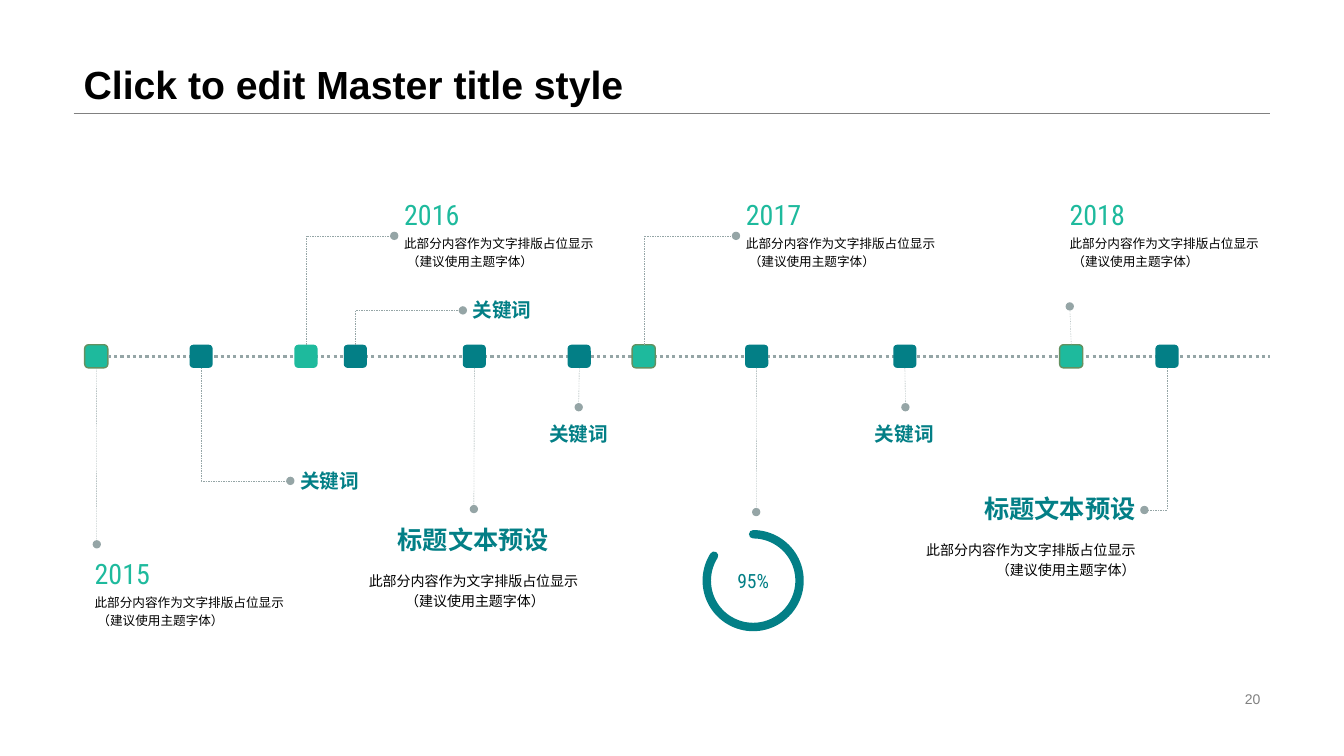
from copy import deepcopy

from pptx import Presentation
from pptx.dml.color import RGBColor
from pptx.enum.dml import MSO_LINE
from pptx.enum.shapes import MSO_CONNECTOR, MSO_SHAPE
from pptx.enum.text import MSO_ANCHOR, MSO_AUTO_SIZE, PP_ALIGN
from pptx.oxml.ns import qn
from pptx.util import Inches, Pt
from lxml.etree import SubElement

TEAL, MINT, SLATE, GRAY, BLACK = "037F86", "1EBA9D", "95A5A6", "808080", "000000"
OLIVE = "639160"
ARIAL, CONDENSED = "Arial", "Roboto Condensed"
LEFT, CENTER, RIGHT = PP_ALIGN.LEFT, PP_ALIGN.CENTER, PP_ALIGN.RIGHT
BODY = "此部分内容作为文字排版占位显示\v （建议使用主题字体）"
HEADING = "标题文本预设"
KEYWORD = "关键词"
MARKER_TOP, MARKER_SIZE = 3.42, 0.23
BOTTOM, TOP, RIGHT_SIDE = 2, 0, 3


def color(value):
    """Turn a hex string into a colour."""
    return RGBColor.from_string(value)


def write(shape, text, size, fill, font=ARIAL, bold=False, align=LEFT,
          spacing=None, anchor=MSO_ANCHOR.TOP):
    """Put one formatted paragraph into a shape."""
    frame = shape.text_frame
    frame.text = text
    frame.word_wrap = True
    frame.auto_size = MSO_AUTO_SIZE.NONE
    frame.vertical_anchor = anchor
    paragraph = frame.paragraphs[0]
    paragraph.alignment = align
    if spacing:
        paragraph.line_spacing = spacing
    for span in paragraph.runs:
        span.font.name = font
        span.font.size = Pt(size)
        span.font.bold = bold
        span.font.color.rgb = color(fill)
    for line_break in paragraph._p.findall(qn("a:br")):
        line_break.insert(0, deepcopy(paragraph.runs[0]._r.rPr))


def add_text(page, left, top, width, height, *content, **style):
    """Add a text box with one paragraph."""
    box = page.shapes.add_textbox(Inches(left), Inches(top), Inches(width), Inches(height))
    write(box, *content, **style)


def add_marker(page, left, fill, outlined):
    """Add a rounded square on the time axis."""
    marker = page.shapes.add_shape(
        MSO_SHAPE.ROUNDED_RECTANGLE, Inches(left), Inches(MARKER_TOP),
        Inches(MARKER_SIZE), Inches(MARKER_SIZE))
    marker.shadow.inherit = False
    marker.fill.solid()
    marker.fill.fore_color.rgb = color(fill)
    if outlined:
        marker.line.color.rgb = color(OLIVE)
        marker.line.width = Pt(1)
    else:
        marker.line.fill.background()
    return marker


def add_line(page, start, end, stroke, width, dash=None, dot=False, kind=MSO_CONNECTOR.STRAIGHT):
    """Add a connector, with an optional dot at its end."""
    line = page.shapes.add_connector(kind, *(Inches(value) for value in start + end))
    line.line.color.rgb = color(stroke)
    line.line.width = Pt(width)
    if dash:
        line.line.dash_style = dash
    if dot:
        SubElement(line.line._get_or_add_ln(), qn("a:tailEnd"), type="oval")
    SubElement(line._element.spPr, qn("a:effectLst"))
    return line


def add_stem(page, marker, side, end):
    """Add a straight dashed stem from a marker to a dot."""
    start = ((marker.left + marker.width / 2) / Inches(1), MARKER_TOP)
    stem = add_line(page, start, end, SLATE, 0.25, MSO_LINE.DASH, True)
    stem.begin_connect(marker, side)


def add_elbow(page, marker, end):
    """Add a dashed bend that leaves a marker vertically and ends sideways."""
    x = (marker.left + marker.width / 2) / Inches(1)
    upward = end[1] < MARKER_TOP
    y = MARKER_TOP if upward else MARKER_TOP + MARKER_SIZE
    elbow = add_line(page, (x, y), end, SLATE, 0.25, MSO_LINE.DASH, True, MSO_CONNECTOR.ELBOW)
    across, along = abs(end[0] - x), abs(end[1] - y)
    elbow.left = Inches((x + end[0] - along) / 2)
    elbow.top = Inches((y + end[1] - across) / 2)
    elbow.width, elbow.height = Inches(along), Inches(across)
    properties = elbow._element.spPr
    frame = properties.find(qn("a:xfrm"))
    frame.set("rot", "5400000")
    frame.set("flipH", str(int(upward)))
    frame.set("flipV", str(int(end[0] > x)))
    properties.find(qn("a:prstGeom")).set("prst", "bentConnector2")


def add_year(page, left, top, year):
    """Add a year with its description."""
    add_text(page, left, top, 2.3, 0.43, year, 20, MINT, font=CONDENSED)
    add_text(page, left, top + 0.35, 2.31, 0.61, BODY, 9, BLACK, spacing=1.2)


def add_topic(page, left, top, align):
    """Add a heading with its description."""
    add_text(page, left, top, 2.31, 0.45, HEADING, 18, TEAL, bold=True, align=align)
    add_text(page, left, top + 0.45, 2.31, 0.61, BODY, 10, BLACK, align=align, spacing=1.2)


def add_gauge(page):
    """Add the ring with its percentage."""
    ring = page.shapes.add_shape(
        MSO_SHAPE.ARC, Inches(7.01), Inches(5.3), Inches(0.92), Inches(0.92))
    ring.adjustments[0], ring.adjustments[1] = 162, 127.51
    ring.shadow.inherit = False
    ring.fill.background()
    ring.line.color.rgb = color(TEAL)
    ring.line.width = Pt(6)
    ring.line._get_or_add_ln().set("cap", "rnd")
    write(ring, "95%", 14, TEAL, font=CONDENSED, align=CENTER, anchor=MSO_ANCHOR.MIDDLE)
    ring.text_frame.margin_left = ring.text_frame.margin_right = 0


def add_title(page):
    """Place the title above its rule."""
    title = page.shapes.title
    title.left, title.top = Inches(0.73), Inches(0)
    title.width, title.height = Inches(11.87), Inches(1.12)
    write(title, "Click to edit Master title style", 28, BLACK, bold=True,
          spacing=0.9, anchor=MSO_ANCHOR.BOTTOM)
    add_line(page, (0.73, 1.12), (12.6, 1.12), GRAY, 0.25)


def main():
    """Build the timeline slide."""
    deck = Presentation()
    deck.slide_width, deck.slide_height = Inches(13.33), Inches(7.5)
    page = deck.slides.add_slide(deck.slide_layouts[5])
    add_title(page)
    add_text(page, 9.42, 6.82, 3.18, 0.23, "20", 10, GRAY, align=RIGHT,
             anchor=MSO_ANCHOR.MIDDLE)

    first = add_marker(page, 0.84, MINT, True)
    axis = add_line(page, (1.07, 3.54), (12.6, 3.54), SLATE, 2.25, MSO_LINE.ROUND_DOT)
    axis.begin_connect(first, RIGHT_SIDE)
    axis.end_y = axis.begin_y
    add_stem(page, first, BOTTOM, (0.96, 5.4))

    for left, fill, outlined, side, end in (
            (4.59, TEAL, False, BOTTOM, (4.7, 5.05)),
            (5.63, TEAL, False, BOTTOM, (5.74, 4.04)),
            (7.39, TEAL, False, BOTTOM, (7.5, 5.08)),
            (8.86, TEAL, False, BOTTOM, (8.98, 4.04)),
            (10.51, MINT, True, TOP, (10.61, 3.04))):
        add_stem(page, add_marker(page, left, fill, outlined), side, end)

    for left, fill, outlined, end in (
            (1.88, TEAL, False, (2.88, 4.77)),
            (2.92, MINT, False, (3.91, 2.34)),
            (3.41, TEAL, False, (4.59, 3.08)),
            (6.27, MINT, True, (7.3, 2.34)),
            (11.46, TEAL, False, (11.35, 5.06))):
        add_elbow(page, add_marker(page, left, fill, outlined), end)

    for left, top, year in ((0.84, 5.47, "2015"), (3.91, 1.91, "2016"),
                            (7.3, 1.91, "2017"), (10.51, 1.91, "2018")):
        add_year(page, left, top, year)
    for left, top, align in ((2.88, 4.6, LEFT), (4.59, 2.91, LEFT),
                             (5.09, 4.14, CENTER), (8.32, 4.14, CENTER)):
        add_text(page, left, top, 1.3, 0.34, KEYWORD, 14, TEAL, bold=True, align=align)
    add_topic(page, 3.54, 5.15, CENTER)
    add_topic(page, 9.05, 4.84, RIGHT)
    add_gauge(page)
    deck.save("out.pptx")


if __name__ == "__main__":
    main()
